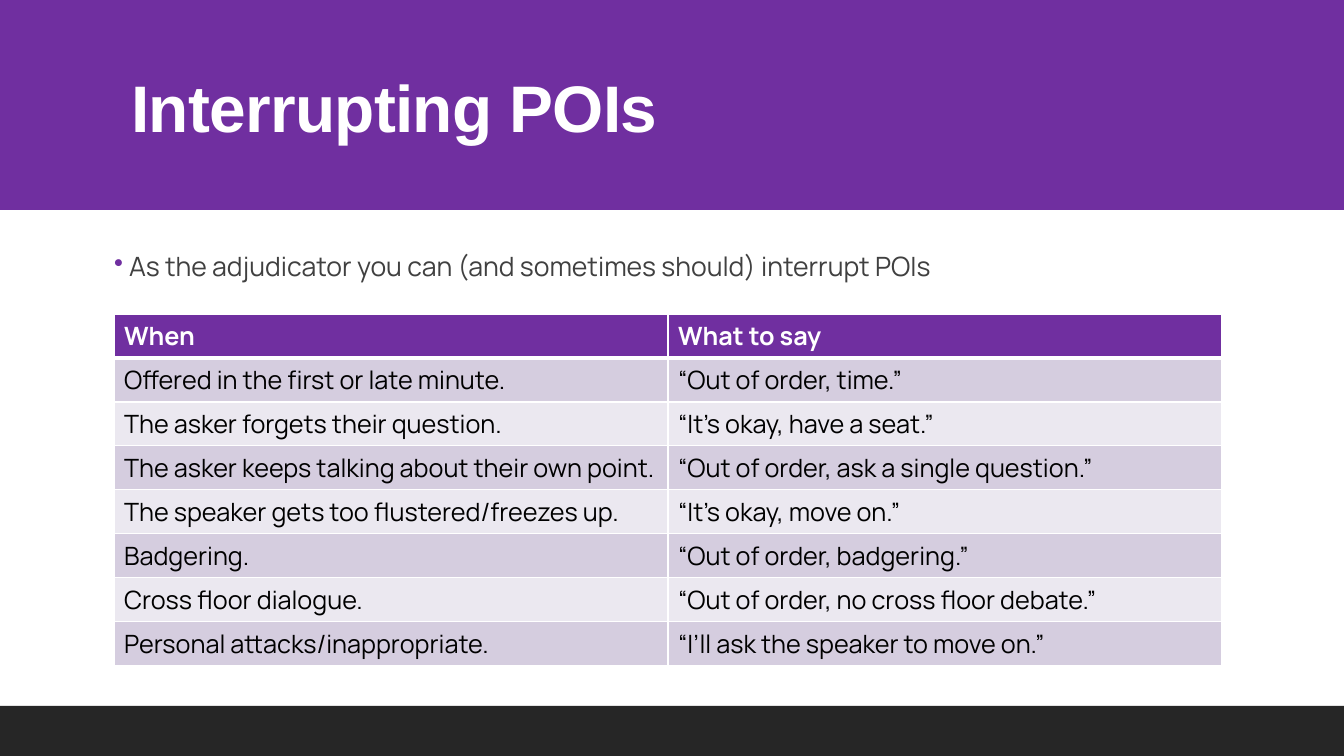
from lxml.etree import SubElement
from pptx import Presentation
from pptx.dml.color import RGBColor
from pptx.enum.shapes import MSO_SHAPE
from pptx.enum.text import MSO_ANCHOR, PP_ALIGN
from pptx.oxml.ns import qn
from pptx.util import Pt

PX = 914400 / 100.8
COLORS = {
    "purple": "702FA0",
    "white": "FFFFFF",
    "charcoal": "262626",
    "gray": "404040",
    "black": "000000",
    "lilac": "D5CDDF",
    "pale": "EBE8F0",
}
ROWS = [
    ("When", "What to say"),
    ("Offered in the first or late minute.", "“Out of order, time.”"),
    ("The asker forgets their question.", "“It’s okay, have a seat.”"),
    ("The asker keeps talking about their own point.", "“Out of order, ask a single question.”"),
    ("The speaker gets too flustered/freezes up.", "“It’s okay, move on.”"),
    ("Badgering.", "“Out of order, badgering.”"),
    ("Cross floor dialogue.", "“Out of order, no cross floor debate.”"),
    ("Personal attacks/inappropriate.", "“I’ll ask the speaker to move on.”"),
]


def px(*lengths):
    return [round(length * PX) for length in lengths]


def add_text(paragraph, text, font, size, color, bold=False):
    run = paragraph.add_run()
    run.text = text
    run.font.name = font
    run.font.size = Pt(size)
    run.font.bold = bold
    run.font.color.rgb = RGBColor.from_string(COLORS[color])
    return run


deck = Presentation()
deck.slide_width, deck.slide_height = px(1344, 756)
slide = deck.slides.add_slide(deck.slide_layouts[5])
slide.background.fill.solid()
slide.background.fill.fore_color.rgb = RGBColor.from_string(COLORS["white"])

title = slide.shapes.title
for top, height, color in [(0, 210, "purple"), (706, 50, "charcoal")]:
    band = slide.shapes.add_shape(MSO_SHAPE.RECTANGLE, *px(0, top, 1344, height))
    band.shadow.inherit = False
    band.fill.solid()
    band.fill.fore_color.rgb = RGBColor.from_string(COLORS[color])
    band.line.fill.background()
    title.element.addprevious(band.element)

title.left, title.top, title.width, title.height = px(121, 31, 1109, 160)
title.text_frame.vertical_anchor = MSO_ANCHOR.MIDDLE
heading = title.text_frame.paragraphs[0]
heading.alignment = PP_ALIGN.LEFT
heading.line_spacing = 0.9
heading_run = add_text(heading, "Interrupting POIs", "Arial", 47, "white", True)
heading_run.font.element.set("spc", "-50") if hasattr(heading_run.font, "element") else heading_run._r.get_or_add_rPr().set("spc", "-50")

advice = slide.shapes.add_textbox(*px(114, 242, 1109, 60)).text_frame
advice.word_wrap = True
advice.margin_left = advice.margin_right = 0
advice_line = advice.paragraphs[0]
advice_line.line_spacing = 1.1
advice_line.space_after = Pt(2)
bullet_format = advice_line._p.get_or_add_pPr()
indent = px(15)[0]
bullet_format.set("marL", str(indent))
bullet_format.set("indent", str(-indent))
bullet_color = SubElement(bullet_format, qn("a:buClr"))
SubElement(bullet_color, qn("a:srgbClr"), val=COLORS["purple"])
SubElement(bullet_format, qn("a:buChar"), char="•")
add_text(
    advice_line,
    "As the adjudicator you can (and sometimes should) interrupt POIs",
    "Manrope", 19, "gray",
)

responses = slide.shapes.add_table(len(ROWS), 2, *px(114, 314, 1108, 352)).table
for row_index, row in enumerate(ROWS):
    is_header = row_index == 0
    row_color = "purple" if is_header else ("pale", "lilac")[row_index % 2]
    border_widths = {
        "lnL": 1,
        "lnR": 1,
        "lnT": 3 if row_index == 1 else 1,
        "lnB": 3 if is_header else 1,
    }
    for column_index, text in enumerate(row):
        cell = responses.cell(row_index, column_index)
        cell_format = cell._tc.get_or_add_tcPr()
        for side, width in border_widths.items():
            border = SubElement(cell_format, qn(f"a:{side}"), w=str(Pt(width)))
            border_fill = SubElement(border, qn("a:solidFill"))
            SubElement(border_fill, qn("a:srgbClr"), val=COLORS["white"])
        cell.fill.solid()
        cell.fill.fore_color.rgb = RGBColor.from_string(COLORS[row_color])
        add_text(
            cell.text_frame.paragraphs[0], text, "Manrope", 18,
            "white" if is_header else "black", is_header,
        )

deck.save("out.pptx")
